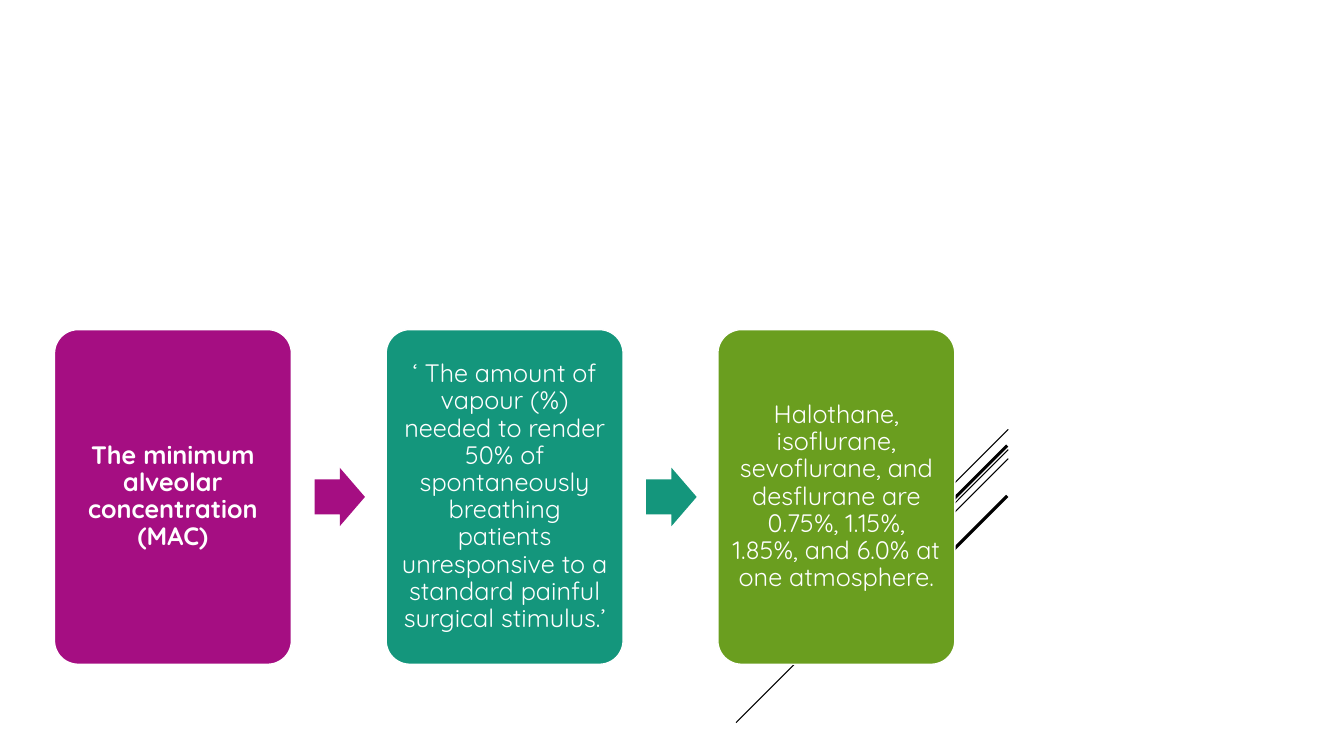
"""Build a slide that defines the minimum alveolar concentration in three steps."""
from dataclasses import dataclass

from lxml import etree
from pptx import Presentation
from pptx.dml.color import RGBColor
from pptx.enum.shapes import MSO_CONNECTOR as Connector, MSO_SHAPE as Preset
from pptx.enum.text import MSO_ANCHOR as Anchor, PP_ALIGN as Align
from pptx.oxml.ns import qn
from pptx.slide import Slide
from pptx.util import Inches, Pt

FONT = "Quicksand"
WHITE = "FFFFFF"
BLACK = "000000"
CARD_LEFT, CARD_TOP, CARD_WIDTH, CARD_HEIGHT = 0.54, 3.27, 2.35, 3.32
CARD_STEP = 3.29
ARROW_OFFSET, ARROW_WIDTH, ARROW_HEIGHT = 2.58, 0.5, 0.58
TEXT_INSET = 0.07


@dataclass
class Stripe:
    right: float
    top: float
    left: float
    bottom: float
    weight: float


@dataclass
class Step:
    text: str
    color: str
    bold: bool = False


STRIPES = [
    Stripe(10, 4.26, 9.17, 5.09, 0.75),
    Stripe(10, 4.46, 7.3, 7.17, 0.75),
    Stripe(10, 4.55, 8.28, 6.27, 0.75),
    Stripe(9.99, 4.42, 8.42, 5.99, 2.25),
    Stripe(9.99, 4.92, 8.85, 6.06, 2.25),
]
STEPS = [
    Step("The minimum alveolar concentration (MAC)", "A50E82", bold=True),
    Step("‘ The amount of vapour (%) needed to render 50% of spontaneously breathing "
         "patients unresponsive to a standard painful surgical stimulus.’", "14967C"),
    Step("Halothane, isoflurane, sevoflurane, and desflurane are 0.75%, 1.15%, 1.85%, "
         "and 6.0% at one atmosphere.", "6A9E1F"),
]


def rgb(value: str) -> RGBColor:
    return RGBColor.from_string(value)


def draw_stripe(slide: Slide, stripe: Stripe) -> None:
    line = slide.shapes.add_connector(
        Connector.STRAIGHT, Inches(stripe.right), Inches(stripe.top),
        Inches(stripe.left), Inches(stripe.bottom))
    line.line.color.rgb = rgb(BLACK)
    line.line.width = Pt(stripe.weight)
    etree.SubElement(line._element.spPr, qn("a:effectLst"))


def draw_card(slide: Slide, step: Step, left: float) -> None:
    card = slide.shapes.add_shape(
        Preset.ROUNDED_RECTANGLE, Inches(left), Inches(CARD_TOP),
        Inches(CARD_WIDTH), Inches(CARD_HEIGHT))
    card.adjustments[0] = 0.1
    card.shadow.inherit = False
    card.fill.solid()
    card.fill.fore_color.rgb = rgb(step.color)
    card.line.color.rgb = rgb(WHITE)
    card.line.width = Pt(1)
    frame = card.text_frame
    frame.word_wrap = True
    frame.vertical_anchor = Anchor.MIDDLE
    frame.margin_left = frame.margin_right = Inches(TEXT_INSET)
    frame.margin_top = frame.margin_bottom = Inches(TEXT_INSET)
    paragraph = frame.paragraphs[0]
    paragraph.text = step.text
    paragraph.alignment = Align.CENTER
    paragraph.line_spacing = 0.9
    paragraph.font.name = FONT
    paragraph.font.size = Pt(18)
    paragraph.font.bold = step.bold
    paragraph.font.color.rgb = rgb(WHITE)


def draw_arrow(slide: Slide, color: str, left: float) -> None:
    top = CARD_TOP + (CARD_HEIGHT - ARROW_HEIGHT) / 2
    arrow = slide.shapes.add_shape(
        Preset.RIGHT_ARROW, Inches(left), Inches(top),
        Inches(ARROW_WIDTH), Inches(ARROW_HEIGHT))
    arrow.adjustments[0] = 0.6
    arrow.adjustments[1] = 0.5
    arrow.shadow.inherit = False
    arrow.fill.solid()
    arrow.fill.fore_color.rgb = rgb(color)
    arrow.line.fill.background()


def main() -> None:
    presentation = Presentation()
    presentation.slide_width = Inches(13.33)
    presentation.slide_height = Inches(7.5)
    slide = presentation.slides.add_slide(presentation.slide_layouts[6])
    for stripe in STRIPES:
        draw_stripe(slide, stripe)
    for index, step in enumerate(STEPS):
        left = CARD_LEFT + index * CARD_STEP
        draw_card(slide, step, left)
        if index < len(STEPS) - 1:
            draw_arrow(slide, step.color, left + ARROW_OFFSET)
    presentation.save("out.pptx")


if __name__ == "__main__":
    main()
